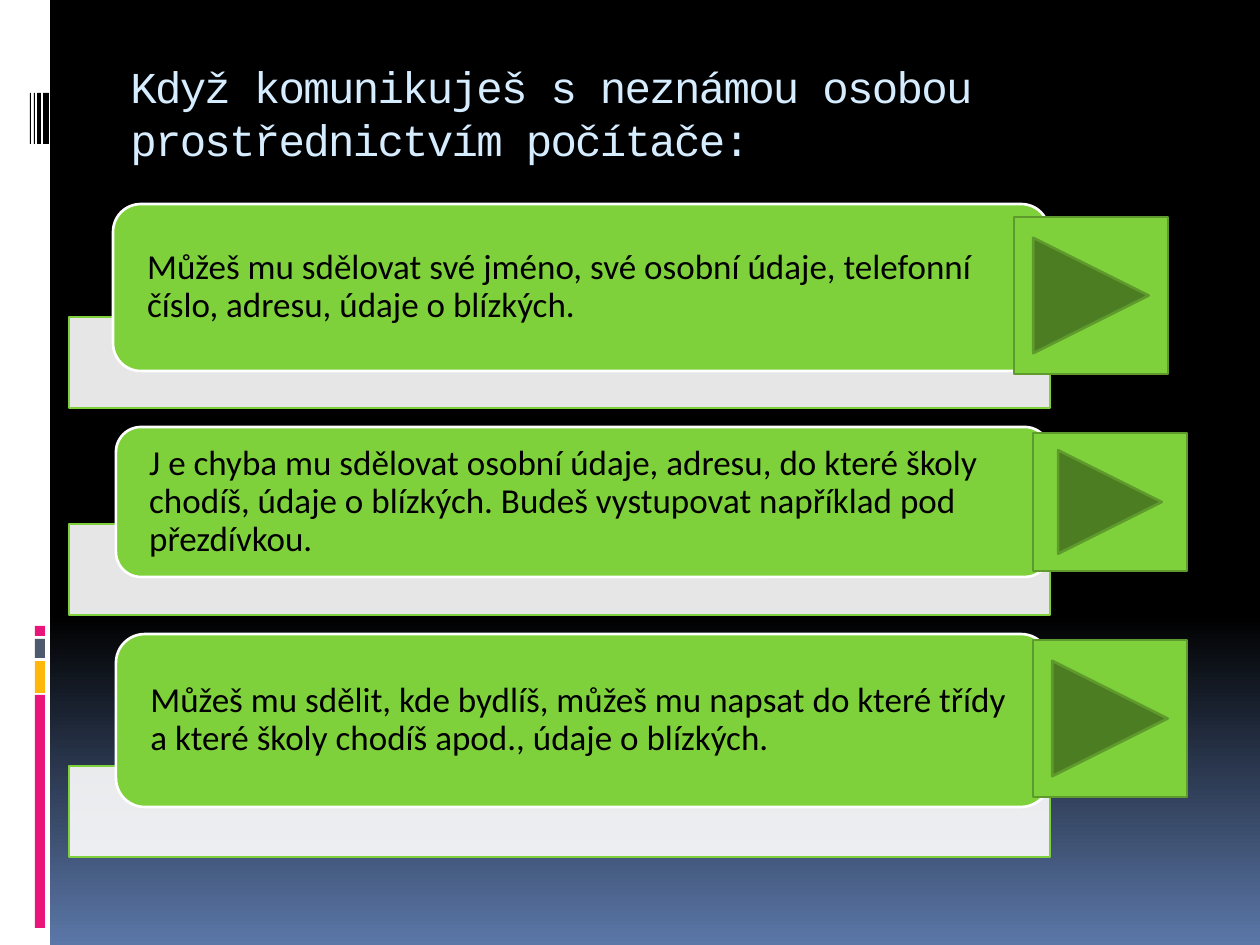
"""Build the slide on talking to strangers through a computer."""
from copy import deepcopy

from lxml.etree import SubElement
from pptx import Presentation
from pptx.dml.color import RGBColor
from pptx.enum.shapes import MSO_SHAPE as Shape
from pptx.enum.text import MSO_ANCHOR as Anchor, PP_ALIGN as Align
from pptx.oxml.ns import qn
from pptx.util import Emu, Pt

BLACK = RGBColor(0, 0, 0)
WHITE = RGBColor(255, 255, 255)
BLUE = RGBColor(0x5B, 0x77, 0xA8)
PALE = RGBColor(0xD6, 0xEC, 0xFF)
PINK = RGBColor(0xEA, 0x15, 0x7A)
AMBER = RGBColor(0xFE, 0xB8, 0x0A)
SLATE = RGBColor(0x4E, 0x5B, 0x6F)
GREEN = RGBColor(0x7F, 0xD1, 0x3B)
DARK_GREEN = RGBColor(0x5E, 0x9B, 0x2C)

TITLE = "Když komunikuješ s\u00a0neznámou osobou prostřednictvím počítače:"
BACKDROP = [(0, BLACK), (0.65, BLACK), (1, BLUE)]
SIDEBAR = [
    (0, 0, 50, 945, WHITE),
    (35, 695, 10, 233, PINK),
    (35, 661, 10, 32, AMBER),
    (35, 639, 10, 19, SLATE),
    (35, 626, 10, 10, PINK),
]
BARCODE = [(43, 6), (37, 4), (34, 1), (30, 1)]
ANSWERS = [
    {"text": "Můžeš mu sdělovat své jméno, své osobní údaje, telefonní číslo, "
             "adresu, údaje o blízkých.",
     "card": (113, 204, 936, 167), "strip_top": 317, "button": (1014, 217, 154, 157)},
    {"text": "J e chyba mu sdělovat osobní údaje, adresu, do které školy chodíš, "
             "údaje o blízkých. Budeš vystupovat například pod přezdívkou.",
     "card": (116, 427, 934, 150), "strip_top": 524, "button": (1033, 433, 154, 138)},
    {"text": "Můžeš mu sdělit, kde bydlíš, můžeš mu napsat do které třídy a které "
             "školy chodíš apod., údaje o blízkých.",
     "card": (116, 634, 934, 173), "strip_top": 766, "button": (1033, 640, 154, 157)},
]


def px(length):
    return Emu(round(length * 914400 / 126))


def add_block(slide, preset, box, fill, line=None):
    block = slide.shapes.add_shape(preset, *map(px, box))
    block.shadow.inherit = False
    block.fill.solid()
    block.fill.fore_color.rgb = fill
    if line is None:
        block.line.fill.background()
    else:
        block.line.color.rgb = line
        block.line.width = Pt(1.5)
    return block


def write(frame, text, font_name, size, color):
    frame.word_wrap = True
    frame.vertical_anchor = Anchor.MIDDLE
    frame.text = text
    paragraph = frame.paragraphs[0]
    paragraph.alignment = Align.LEFT
    font = paragraph.runs[0].font
    font.name, font.size, font.color.rgb = font_name, Pt(size), color
    return paragraph


def paint_backdrop(slide):
    fill = slide.background.fill
    fill.gradient()
    fill.gradient_angle = 270
    last = fill.gradient_stops[1]._gs
    last.addnext(deepcopy(last))
    for stop, (position, color) in zip(fill.gradient_stops, BACKDROP):
        stop.position = position
        stop.color.rgb = color


def add_title(slide):
    title = slide.shapes.add_textbox(px(118), px(49), px(1071), px(126))
    paragraph = write(title.text_frame, TITLE, "Courier New", 25.2, PALE)
    paragraph.runs[0].font._element.set("spc", "-100")


def add_answer(slide, answer):
    strip = add_block(slide, Shape.RECTANGLE, (69, answer["strip_top"], 981, 91), WHITE, GREEN)
    tint = strip.fill._xPr.find(qn("a:solidFill"))[0]
    SubElement(tint, qn("a:alpha")).set("val", "90000")
    card = add_block(slide, Shape.ROUNDED_RECTANGLE, answer["card"], GREEN, WHITE)
    frame = card.text_frame
    frame.margin_left = frame.margin_right = px(26)
    frame.margin_top = frame.margin_bottom = 0
    write(frame, answer["text"], "Calibri", 20, BLACK).line_spacing = 0.9


def main():
    deck = Presentation()
    deck.slide_width, deck.slide_height = px(1260), px(945)
    slide = deck.slides.add_slide(deck.slide_layouts[6])
    paint_backdrop(slide)
    for *box, color in SIDEBAR:
        add_block(slide, Shape.RECTANGLE, box, color)
    for left, width in BARCODE:
        add_block(slide, Shape.RECTANGLE, (left, 93, width, 51), BLACK)
    add_title(slide)
    for answer in ANSWERS:
        add_answer(slide, answer)
    for answer in ANSWERS:
        add_block(slide, Shape.ACTION_BUTTON_FORWARD_OR_NEXT, answer["button"], GREEN, DARK_GREEN)
    deck.save("out.pptx")


if __name__ == "__main__":
    main()
